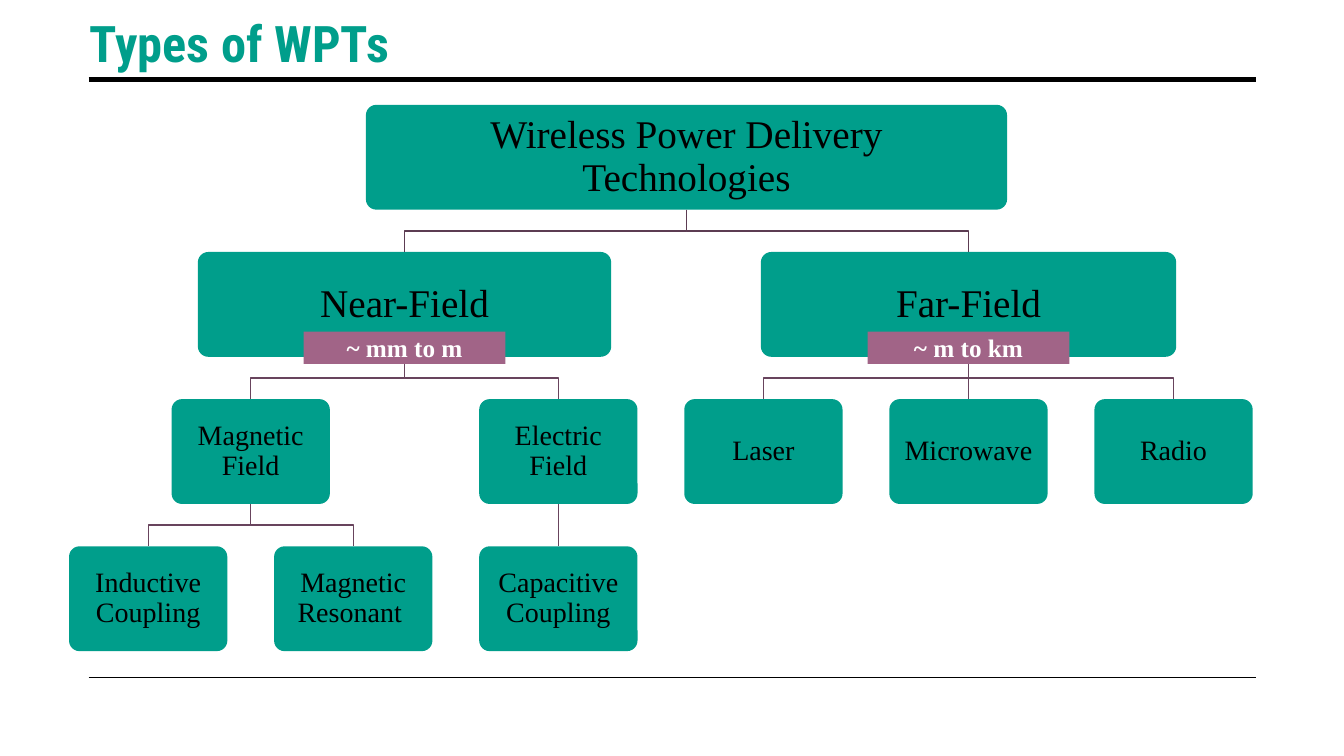
from dataclasses import dataclass

from pptx import Presentation
from pptx.dml.color import RGBColor
from pptx.enum.shapes import MSO_CONNECTOR as Connector, MSO_SHAPE as Shape
from pptx.enum.text import MSO_ANCHOR as Anchor, MSO_AUTO_SIZE as AutoSize, PP_ALIGN as Align
from pptx.oxml import parse_xml
from pptx.oxml.ns import nsdecls
from pptx.util import Inches, Pt

TEAL = RGBColor(0x00, 0x9E, 0x8B)
MAUVE = RGBColor(0xA1, 0x64, 0x87)
TOP_LINK = RGBColor(0x5C, 0x3C, 0x52)
LOWER_LINK = RGBColor(0x68, 0x44, 0x5D)
BLACK = RGBColor(0x00, 0x00, 0x00)
WHITE = RGBColor(0xFF, 0xFF, 0xFF)

SERIF = "Times New Roman"
LARGE = {"name": SERIF, "size": Pt(28)}
SMALL = {"name": SERIF, "size": Pt(20)}
TAG = {"name": SERIF, "size": Pt(18), "bold": True}
HEADING = {"name": "Roboto Condensed", "size": Pt(36), "bold": True}

# Tree grid: six columns of leaf centres, four rows of boxes
FIRST_CENTRE, LAST_CENTRE, LAST_COLUMN = 1.47, 11.64, 5
COLUMN_STEP = (LAST_CENTRE - FIRST_CENTRE) / LAST_COLUMN
FIRST_ROW, ROW_STEP, BOX_HEIGHT = 1.04, 1.46, 1.04
TAG_WIDTH, TAG_HEIGHT, TAG_DROP = 2, 0.32, 0.79
RULE_LEFT, RULE_RIGHT = 0.88, 12.46


@dataclass
class Node:
    label: str
    column: float
    width: float = 1.57
    children: tuple = ()
    reach: str = ""


TREE = Node("Wireless Power Delivery Technologies", 2.625, 6.36, (
    Node("Near-Field", 1.25, 4.1, (
        Node("Magnetic Field", 0.5, children=(
            Node("Inductive Coupling", 0), Node("Magnetic Resonant ", 1))),
        Node("Electric Field", 2, children=(Node("Capacitive Coupling", 2),)),
    ), "~ mm to m"),
    Node("Far-Field", 4, 4.12, (
        Node("Laser", 3), Node("Microwave", 4), Node("Radio", 5),
    ), "~ m to km"),
))


def set_all(target, values):
    for name, value in values.items():
        setattr(target, name, value)


def centre_of(column):
    return FIRST_CENTRE + column * COLUMN_STEP


def write(shape, text, style, color, align=Align.CENTER, inset=0.1, spacing=None):
    frame = shape.text_frame
    margin = Inches(inset)
    set_all(frame, {"word_wrap": True, "auto_size": AutoSize.NONE,
                    "vertical_anchor": Anchor.MIDDLE,
                    "margin_left": margin, "margin_right": margin,
                    "margin_top": Inches(min(inset, 0.05)),
                    "margin_bottom": Inches(min(inset, 0.05))})
    para = frame.paragraphs[0]
    set_all(para, {"alignment": align, "line_spacing": spacing})
    span = para.add_run()
    span.text = text
    set_all(span.font, style)
    span.font.color.rgb = color


def add_block(page, kind, left, top, width, height, fill):
    block = page.shapes.add_shape(kind, *map(Inches, (left, top, width, height)))
    block.shadow.inherit = False
    block.fill.solid()
    block.fill.fore_color.rgb = fill
    block.line.fill.background()
    return block


def add_line(page, start, end, color, weight):
    line = page.shapes.add_connector(Connector.STRAIGHT, *map(Inches, start + end))
    line.line.color.rgb = color
    line.line.width = Pt(weight)
    line._element.spPr.append(parse_xml(f"<a:effectLst {nsdecls('a')}/>"))
    return line


def add_elbow(page, start, end, color):
    (x1, y1), (x2, y2) = start, end
    middle = (y1 + y2) / 2
    points = [tuple(map(Inches, point))
              for point in ((x1, y1), (x1, middle), (x2, middle), (x2, y2))]
    builder = page.shapes.build_freeform(*points[0])
    builder.add_line_segments(points[1:], close=False)
    elbow = builder.convert_to_shape()
    elbow.shadow.inherit = False
    elbow.fill.background()
    elbow.line.color.rgb = color
    elbow.line.width = Pt(1)


def add_link(page, parent, child, parent_box, child_box, row):
    color = LOWER_LINK if row else TOP_LINK
    bottom = FIRST_ROW + row * ROW_STEP + BOX_HEIGHT
    start = (centre_of(parent.column), bottom)
    end = (centre_of(child.column), FIRST_ROW + (row + 1) * ROW_STEP)
    if parent.column == child.column:
        line = add_line(page, start, end, color, 1)
        line.begin_connect(parent_box, 2)
        line.end_connect(child_box, 0)
    else:
        add_elbow(page, start, end, color)


def add_branch(page, node, row=0):
    centre, top = centre_of(node.column), FIRST_ROW + row * ROW_STEP
    box = add_block(page, Shape.ROUNDED_RECTANGLE, centre - node.width / 2, top,
                    node.width, BOX_HEIGHT, TEAL)
    box.adjustments[0] = 0.1
    style, inset = (LARGE, 0.15) if row < 2 else (SMALL, 0.11)
    write(box, node.label, style, BLACK, inset=inset, spacing=0.9)
    for child in node.children:
        child_box = add_branch(page, child, row + 1)
        add_link(page, node, child, box, child_box, row)
    if node.reach:
        tag = add_block(page, Shape.RECTANGLE, centre - TAG_WIDTH / 2, top + TAG_DROP,
                        TAG_WIDTH, TAG_HEIGHT, MAUVE)
        write(tag, node.reach, TAG, WHITE)
    return box


def add_title(page, text):
    title = page.shapes.title
    set_all(title, {"left": Inches(0.79), "top": Inches(0.07),
                    "width": Inches(6.01), "height": Inches(0.71)})
    write(title, text, HEADING, TEAL, Align.LEFT)


def main():
    deck = Presentation()
    deck.slide_width, deck.slide_height = Inches(13.33), Inches(7.5)
    page = deck.slides.add_slide(deck.slide_layouts.get_by_name("Title Only"))

    # Rules above and below the content
    for height, weight in ((0.79, 3.5), (6.72, 1)):
        add_line(page, (RULE_LEFT, height), (RULE_RIGHT, height), BLACK, weight)

    # Heading and tree
    add_title(page, "Types of WPTs")
    add_branch(page, TREE)
    deck.save("out.pptx")


if __name__ == "__main__":
    main()
